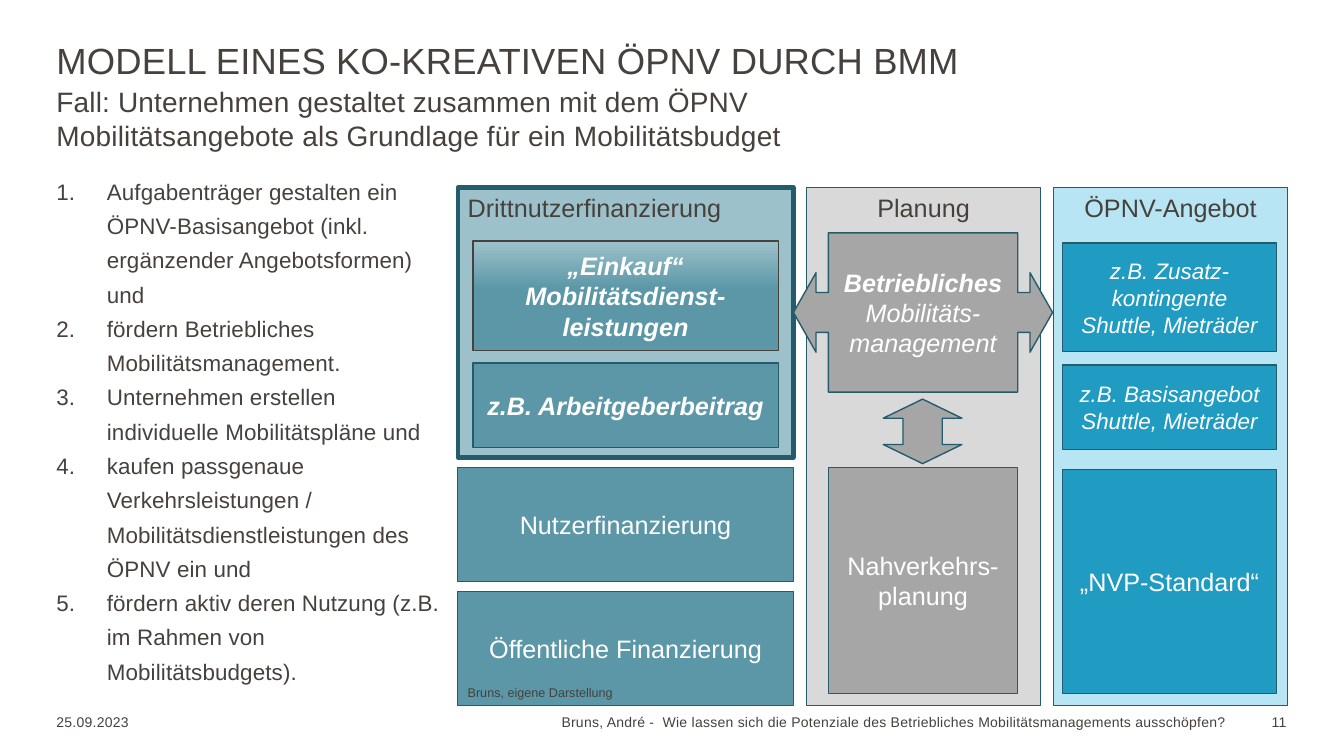
"""Build the slide on the co-creative public transport model."""
from dataclasses import dataclass

from lxml.etree import SubElement
from pptx import Presentation
from pptx.dml.color import RGBColor
from pptx.enum.shapes import MSO_SHAPE as Shape
from pptx.enum.text import MSO_ANCHOR as Anchor, MSO_AUTO_SIZE as AutoSize, PP_ALIGN as Align
from pptx.oxml.ns import qn
from pptx.util import Inches, Pt

COLORS = {
    "text": "46413C", "white": "FFFFFF", "edge": "255C6B",
    "teal": "5B97A7", "pale_teal": "9DC1CA",
    "blue": "209BC1", "pale_blue": "B7E5F3",
    "gray": "A6A6A6", "pale_gray": "D9D9D9",
}


@dataclass
class Block:
    """A filled shape of the model; spans hold text and bold flag."""
    area: tuple[float, float, float, float]
    fill: str
    spans: tuple[tuple[str, bool], ...] = ()
    size: int = 18
    italic: bool = False
    header: bool = False
    align: Align = Align.CENTER
    shape: Shape = Shape.RECTANGLE
    adjustments: tuple[float, ...] = ()
    rotation: int = 0
    edge: str = "edge"
    edge_width: int = 1
    fade_to: str = ""


@dataclass
class Note:
    """A text without a fill."""
    area: tuple[float, float, float, float]
    lines: tuple[str, ...]
    size: int
    leading: float = 0
    spacing: int = 0
    align: Align = Align.LEFT
    anchor: Anchor = Anchor.TOP
    insets: tuple[float, float, float, float] = (0, 0, 0, 0)
    numbered: bool = False


TITLE = Note((0.56, 0.44, 9.06, 0.38), ("MODELL EINES KO-KREATIVEN ÖPNV DURCH BMM",), 26, 27, 10)
SUBTITLE = Note((0.56, 0.83, 9.06, 0.66), (
    "Fall: Unternehmen gestaltet zusammen mit dem ÖPNV "
    "Mobilitätsangebote als Grundlage für ein Mobilitätsbudget",), 20, 24.5, 10)
STEPS = Note((0.56, 1.69, 3.92, 5.14), (
    "Aufgabenträger gestalten ein ÖPNV-Basisangebot (inkl. ergänzender Angebotsformen) und",
    "fördern Betriebliches Mobilitätsmanagement.",
    "Unternehmen erstellen individuelle Mobilitätspläne und",
    "kaufen passgenaue Verkehrsleistungen / Mobilitätsdienstleistungen des ÖPNV ein und",
    "fördern aktiv deren Nutzung (z.B. im Rahmen von Mobilitätsbudgets).",
), 16, 24.5, 10, numbered=True)
NOTES = (
    Note((0.56, 7.06, 1.6, 0.2), ("25.09.2023",), 10, 12.5, 20, anchor=Anchor.MIDDLE),
    Note((4.68, 7.06, 7.62, 0.2), (
        "Bruns, André -  Wie lassen sich die Potenziale des Betriebliches "
        "Mobilitätsmanagements ausschöpfen?",), 10, 12.5, 20, Align.RIGHT, Anchor.MIDDLE,
        (0, 0, 0.14, 0)),
    Note((12.3, 7.06, 0.46, 0.2), ("11",), 10, 12.5, 20, Align.RIGHT, Anchor.MIDDLE),
    Note((4.54, 6.75, 2.63, 0.25), ("Bruns, eigene Darstellung",), 9,
         insets=(0.1, 0.05, 0.1, 0.05)),
)
BLOCKS = (
    Block((4.54, 5.87, 3.33, 1.13), "teal", (("Öffentliche Finanzierung", False),)),
    Block((4.54, 4.64, 3.33, 1.13), "teal", (("Nutzerfinanzierung", False),)),
    Block((4.54, 1.86, 3.33, 2.68), "pale_teal", (("Drittnutzerfinanzierung", False),),
          header=True, align=Align.LEFT, edge_width=3),
    Block((4.69, 3.6, 3.03, 0.84), "teal", (("z.B. Arbeitgeberbeitrag", True),), italic=True),
    Block((4.69, 2.39, 3.03, 1.09), "teal", (("„Einkauf“ Mobilitätsdienst-leistungen", True),),
          italic=True, edge="text", fade_to="pale_teal"),
    Block((10.45, 1.86, 2.32, 5.14), "pale_blue", (("ÖPNV-Angebot", False),), header=True),
    Block((10.54, 4.66, 2.12, 2.22), "blue", (("„NVP-Standard“", False),)),
    Block((10.54, 3.62, 2.12, 0.84), "blue", (("z.B. Basisangebot Shuttle, Mieträder", False),),
          size=16, italic=True),
    Block((10.54, 2.41, 2.12, 1.08), "blue",
          (("z.B. Zusatz-kontingente Shuttle, Mieträder", False),), size=16, italic=True),
    Block((8, 1.86, 2.32, 5.14), "pale_gray", (("Planung", False),), header=True),
    Block((7.87, 2.31, 2.57, 1.58), "gray",
          (("Betriebliches", True), (" Mobilitäts-management", False)), italic=True,
          shape=Shape.LEFT_RIGHT_ARROW_CALLOUT, adjustments=(0.25, 0.25, 0.142, 0.731)),
    Block((8.22, 4.64, 1.87, 2.24), "gray", (("Nahverkehrs-planung", False),)),
    Block((8.83, 3.89, 0.64, 0.78), "gray", shape=Shape.LEFT_RIGHT_ARROW,
          adjustments=(0.5, 0.296), rotation=90),
)


def rgb(name: str) -> RGBColor:
    """Return the named colour."""
    return RGBColor.from_string(COLORS[name])


def set_font(para, size: int, color: str) -> None:
    """Set the common font of a paragraph."""
    para.font.name = "Arial"
    para.font.size = Pt(size)
    para.font.color.rgb = rgb(color)


def draw_block(page, block: Block) -> None:
    """Draw one shape of the model with its text."""
    box = page.shapes.add_shape(block.shape, *map(Inches, block.area))
    box.shadow.inherit = False
    box.rotation = block.rotation
    for index, value in enumerate(block.adjustments):
        box.adjustments[index] = value
    if block.fade_to:
        box.fill.gradient()
        box.fill.gradient_angle = 90
        stops = zip(box.fill.gradient_stops, (0.56, 1), (block.fill, block.fade_to))
        for stop, position, color in stops:
            stop.position = position
            stop.color.rgb = rgb(color)
    else:
        box.fill.solid()
        box.fill.fore_color.rgb = rgb(block.fill)
    box.line.color.rgb = rgb(block.edge)
    box.line.width = Pt(block.edge_width)
    if not block.spans:
        return
    frame = box.text_frame
    frame.word_wrap = True
    frame.vertical_anchor = Anchor.TOP if block.header else Anchor.MIDDLE
    para = frame.paragraphs[0]
    para.alignment = block.align
    set_font(para, block.size, "text" if block.header else "white")
    para.font.italic = block.italic
    for text, bold in block.spans:
        span = para.add_run()
        span.text = text
        span.font.bold = bold


def write_note(box, note: Note) -> None:
    """Place a text box or placeholder and fill it with formatted text."""
    box.left, box.top, box.width, box.height = map(Inches, note.area)
    frame = box.text_frame
    frame.auto_size = AutoSize.NONE
    frame.word_wrap = True
    frame.vertical_anchor = note.anchor
    (frame.margin_left, frame.margin_top,
     frame.margin_right, frame.margin_bottom) = map(Inches, note.insets)
    frame.text = "\n".join(note.lines)
    for para in frame.paragraphs:
        properties = para._p.get_or_add_pPr()
        indent = Inches(0.5) if note.numbered else 0
        properties.set("marL", str(indent))
        properties.set("indent", str(-indent))
        if note.numbered:
            SubElement(properties, qn("a:buFont"), typeface="+mj-lt")
            SubElement(properties, qn("a:buAutoNum"), type="arabicPeriod")
        else:
            SubElement(properties, qn("a:buNone"))
        para.alignment = note.align
        para.space_before = Pt(0)
        if note.leading:
            para.line_spacing = Pt(note.leading)
        set_font(para, note.size, "text")
        properties.find(qn("a:defRPr")).set("spc", str(note.spacing))


def main() -> None:
    """Build and save the deck."""
    deck = Presentation()
    deck.slide_width, deck.slide_height = Inches(13.33), Inches(7.5)
    page = deck.slides.add_slide(deck.slide_layouts.get_by_name("Two Content"))
    for box, note in zip(page.placeholders, (TITLE, SUBTITLE, STEPS)):
        write_note(box, note)
    for block in BLOCKS:
        draw_block(page, block)
    for note in NOTES:
        write_note(page.shapes.add_textbox(*map(Inches, note.area)), note)
    deck.save("out.pptx")


if __name__ == "__main__":
    main()
